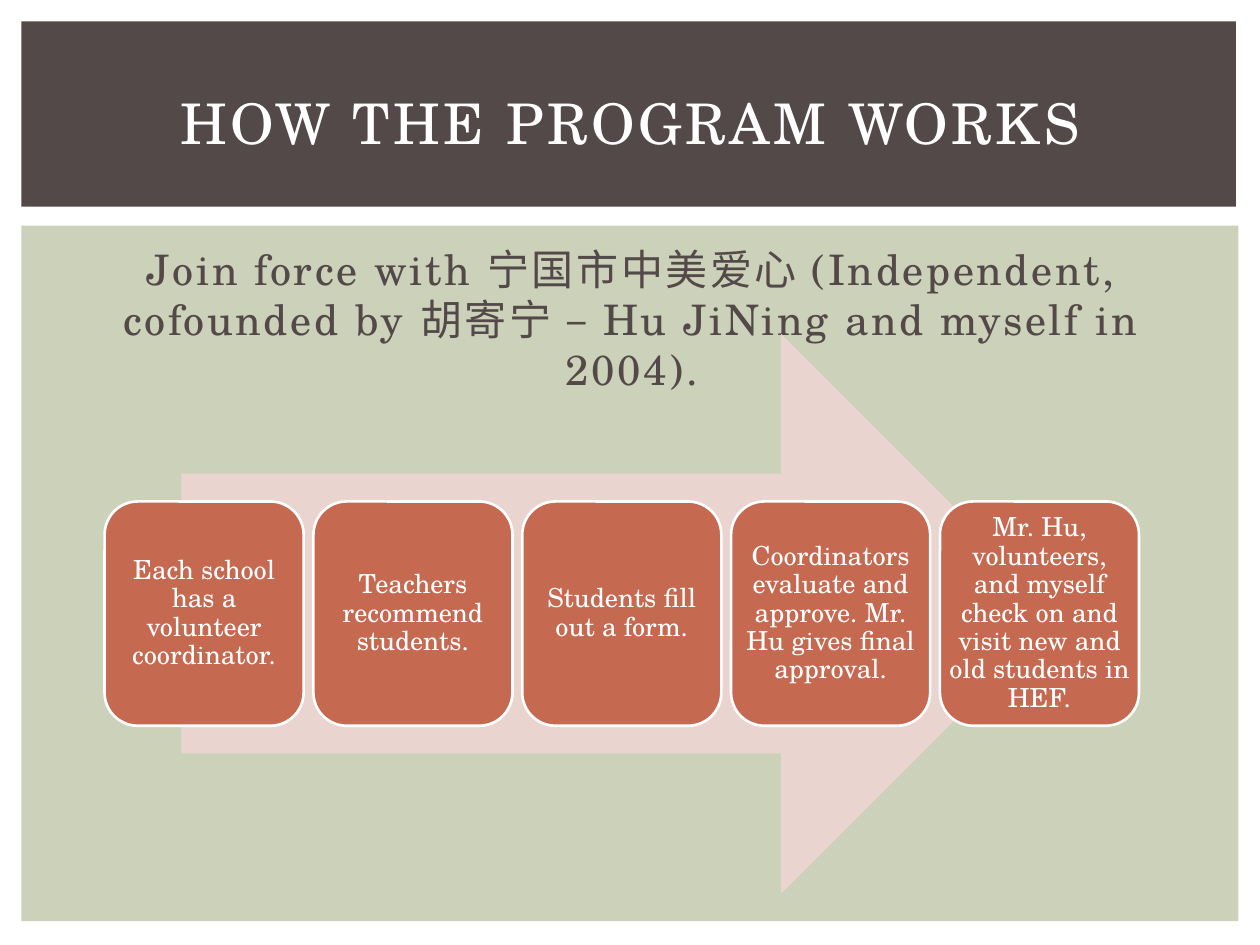
from dataclasses import dataclass

from pptx import Presentation
from pptx.dml.color import RGBColor
from pptx.enum.shapes import MSO_SHAPE
from pptx.enum.text import MSO_ANCHOR, PP_ALIGN
from pptx.shapes.autoshape import Shape
from pptx.slide import Slide
from pptx.text.text import _Paragraph
from pptx.util import Inches, Pt

RECTANGLE = MSO_SHAPE.RECTANGLE
RIGHT_ARROW = MSO_SHAPE.RIGHT_ARROW
ROUNDED = MSO_SHAPE.ROUNDED_RECTANGLE
CENTER = PP_ALIGN.CENTER
TOP = MSO_ANCHOR.TOP
MIDDLE = MSO_ANCHOR.MIDDLE

WHITE = RGBColor(0xFF, 0xFF, 0xFF)
SAGE = RGBColor(0xCC, 0xD1, 0xB9)
BROWN = RGBColor(0x53, 0x49, 0x49)
BLUSH = RGBColor(0xEA, 0xD4, 0xD0)
TERRACOTTA = RGBColor(0xC6, 0x69, 0x51)

FONT = "TeX Gyre Schola"

TITLE = "HOW THE PROGRAM WORKS"
INTRO = (
    "Join force with 宁国市中美爱心 (Independent, cofounded by 胡寄宁 – "
    "Hu JiNing and myself in 2004)."
)
STEPS = [
    "Each school has a volunteer coordinator.",
    "Teachers recommend students.",
    "Students fill out a form.",
    "Coordinators evaluate and approve. Mr. Hu gives final approval.",
    "Mr. Hu, volunteers, and myself check on and visit new and old students in HEF.",
]
STEP_LEFT = 0.83
STEP_PITCH = 1.6575


@dataclass(frozen=True)
class Box:
    left: float
    top: float
    width: float
    height: float

    def lengths(self) -> list[Inches]:
        return [Inches(v) for v in (self.left, self.top, self.width, self.height)]


@dataclass(frozen=True)
class TextStyle:
    size: float
    color: RGBColor
    anchor: MSO_ANCHOR
    spacing: float = 0
    inset_x: float = 0.1
    inset_y: float = 0.05


TITLE_STYLE = TextStyle(32, WHITE, MIDDLE, spacing=2)
INTRO_STYLE = TextStyle(24, BROWN, TOP, spacing=1.5)
STEP_STYLE = TextStyle(15, WHITE, MIDDLE, inset_x=0.06, inset_y=0.06)


def add_filled(slide: Slide, kind: MSO_SHAPE, box: Box, color: RGBColor) -> Shape:
    shape = slide.shapes.add_shape(kind, *box.lengths())
    shape.shadow.inherit = False
    shape.fill.solid()
    shape.fill.fore_color.rgb = color
    shape.line.fill.background()
    return shape


def add_text(slide: Slide, text: str, box: Box, style: TextStyle) -> _Paragraph:
    frame = slide.shapes.add_textbox(*box.lengths()).text_frame
    frame.word_wrap = True
    frame.vertical_anchor = style.anchor
    frame.margin_left = frame.margin_right = Inches(style.inset_x)
    frame.margin_top = frame.margin_bottom = Inches(style.inset_y)
    paragraph = frame.paragraphs[0]
    paragraph.text = text
    paragraph.alignment = CENTER
    run = paragraph.runs[0]
    run.font.name = FONT
    run.font.size = Pt(style.size)
    run.font.color.rgb = style.color
    if style.spacing:
        run._r.get_or_add_rPr().set("spc", str(int(style.spacing * 100)))
    return paragraph


def add_step(slide: Slide, index: int, text: str) -> None:
    box = Box(STEP_LEFT + index * STEP_PITCH, 3.98, 1.58, 1.78)
    card = add_filled(slide, ROUNDED, box, TERRACOTTA)
    card.line.color.rgb = WHITE
    card.line.width = Pt(1.5)
    add_text(slide, text, box, STEP_STYLE).line_spacing = 0.9


def main() -> None:
    presentation = Presentation()
    presentation.slide_width = Inches(10)
    presentation.slide_height = Inches(7.5)
    slide = presentation.slides.add_slide(presentation.slide_layouts[6])

    add_filled(slide, RECTANGLE, Box(0.17, 1.79, 9.66, 5.52), SAGE)
    add_filled(slide, RECTANGLE, Box(0.17, 0.17, 9.64, 1.47), BROWN)
    intro = add_text(slide, INTRO, Box(0.42, 1.88, 9.19, 0.93), INTRO_STYLE)
    intro.space_before = Pt(4.8)
    add_text(slide, TITLE, Box(0.42, 0.39, 9.17, 1.15), TITLE_STYLE)

    add_filled(slide, RIGHT_ARROW, Box(1.44, 2.65, 6.98, 4.44), BLUSH)
    for index, step in enumerate(STEPS):
        add_step(slide, index, step)

    presentation.save("out.pptx")


if __name__ == "__main__":
    main()
